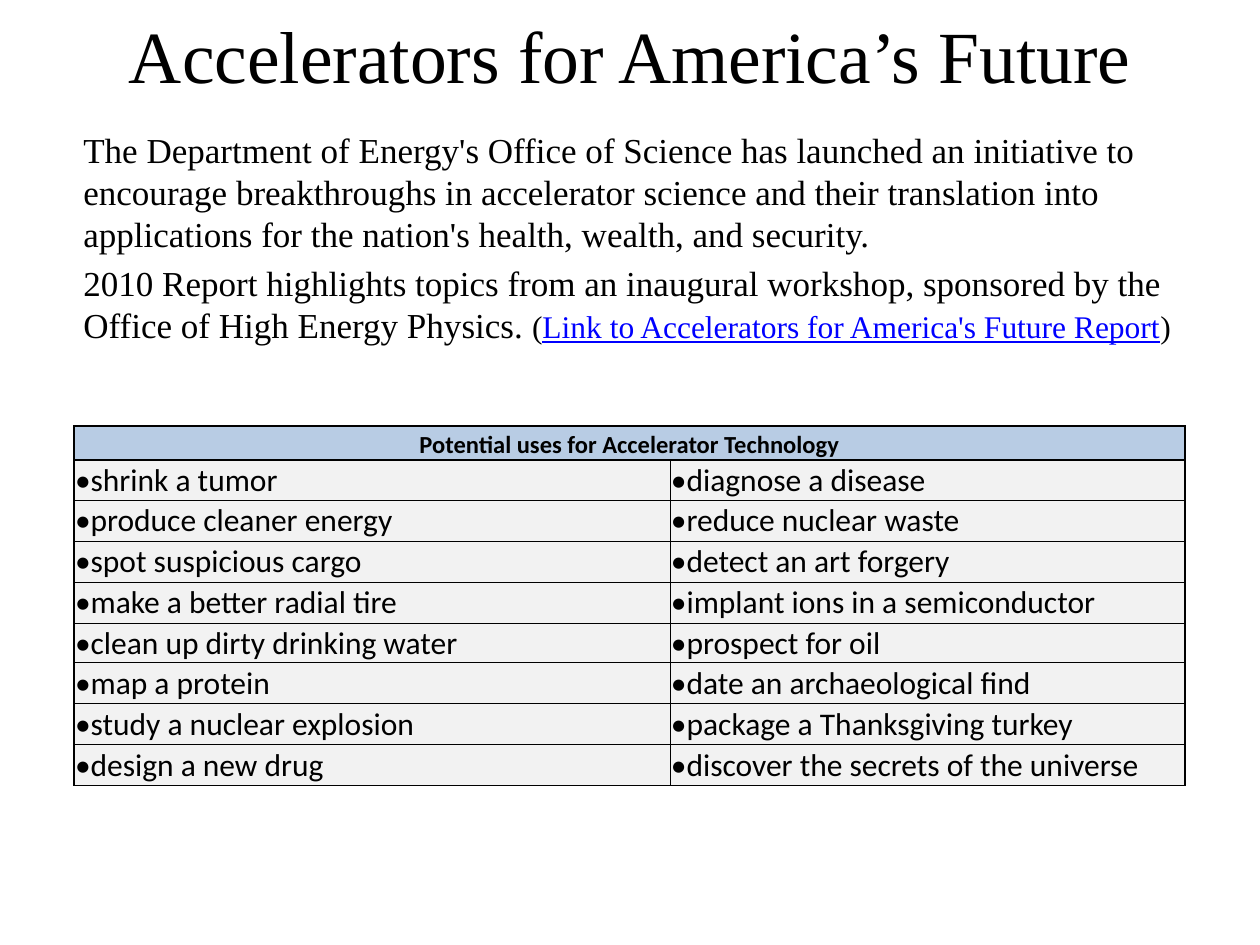
from dataclasses import dataclass

from lxml import etree
from pptx import Presentation
from pptx.dml.color import RGBColor
from pptx.enum.text import MSO_ANCHOR, MSO_AUTO_SIZE, PP_ALIGN
from pptx.oxml.ns import qn
from pptx.util import Emu, Pt

CENTER = PP_ALIGN.CENTER
LEFT = PP_ALIGN.LEFT
MIDDLE = MSO_ANCHOR.MIDDLE
BOTTOM = MSO_ANCHOR.BOTTOM
NO_AUTOFIT = MSO_AUTO_SIZE.NONE

PIXELS_PER_INCH = 126
SERIF, SANS = "Times New Roman", "Calibri"
BLACK, LINK_BLUE = "000000", "0000FF"
HEADER_FILL, BODY_FILL = "B8CCE4", "F2F2F2"
OUTER_LINE, INNER_LINE = 0.75, 0.5

TITLE = "Accelerators for America’s Future"
TABLE_HEADING = "Potential uses for Accelerator Technology"
USES = [
    ("shrink a tumor", "diagnose a disease"),
    ("produce cleaner energy", "reduce nuclear waste"),
    ("spot suspicious cargo", "detect an art forgery"),
    ("make a better radial tire", "implant ions in a semiconductor"),
    ("clean up dirty drinking water", "prospect for oil"),
    ("map a protein", "date an archaeological find"),
    ("study a nuclear explosion", "package a Thanksgiving turkey"),
    ("design a new drug", "discover the secrets of the universe"),
]
COLUMN_WIDTHS = (596, 515)
HEADER_HEIGHT, BODY_HEIGHT = 34, 326


@dataclass
class TextPart:
    text: str
    size: int = 20
    color: str = BLACK
    underline: bool = False


INTRODUCTION = [
    [TextPart("The Department of Energy's Office of Science has launched an "
              "initiative to encourage breakthroughs in accelerator science "
              "and their translation into applications for the nation's "
              "health, wealth, and security.")],
    [TextPart("2010 Report highlights topics from an inaugural workshop, "
              "sponsored by the Office of High Energy Physics. "),
     TextPart("(", 18),
     TextPart("Link to Accelerators for America's Future Report", 18,
              LINK_BLUE, True),
     TextPart(")", 18)],
]


def px(length: int) -> Emu:
    return Emu(round(length * 914400 / PIXELS_PER_INCH))


def rgb(color: str) -> RGBColor:
    return RGBColor.from_string(color)


def style_font(font, name: str, size: int, color: str = BLACK,
               bold: bool = False) -> None:
    font.name = name
    font.size = Pt(size)
    font.bold = bold
    font.color.rgb = rgb(color)


def add_title(slide) -> None:
    title = slide.shapes.title
    title.left, title.top, title.width, title.height = map(px, (63, 27, 1134, 55))
    frame = title.text_frame
    frame.text = TITLE
    frame.auto_size = NO_AUTOFIT
    frame.vertical_anchor = MIDDLE
    paragraph = frame.paragraphs[0]
    paragraph.alignment = CENTER
    style_font(paragraph.runs[0].font, SERIF, 42)


def add_introduction(slide) -> None:
    frame = slide.shapes.add_textbox(*map(px, (71, 122, 1134, 278))).text_frame
    frame.word_wrap = True
    for index, parts in enumerate(INTRODUCTION):
        paragraph = frame.add_paragraph() if index else frame.paragraphs[0]
        paragraph.space_before = Pt(4 if index else 0)
        for part in parts:
            run = paragraph.add_run()
            run.text = part.text
            style_font(run.font, SERIF, part.size, part.color)
            run.font.underline = part.underline


def add_bullet(paragraph) -> None:
    properties = paragraph._p.get_or_add_pPr()
    properties.set("marL", "0")
    properties.set("indent", "0")
    bullet_color = etree.SubElement(properties, qn("a:buClr"))
    etree.SubElement(bullet_color, qn("a:srgbClr"), val=BLACK)
    etree.SubElement(properties, qn("a:buFont"), typeface=SANS)
    etree.SubElement(properties, qn("a:buChar"), char="•")


def set_borders(cell, left: float, right: float, top: float,
                bottom: float) -> None:
    properties = cell._tc.get_or_add_tcPr()
    sides = {"a:lnL": left, "a:lnR": right, "a:lnT": top, "a:lnB": bottom}
    for tag, width in sides.items():
        line = etree.SubElement(properties, qn(tag), w=str(Pt(width)))
        fill = etree.SubElement(line, qn("a:solidFill"))
        etree.SubElement(fill, qn("a:srgbClr"), val=BLACK)


def fill_cell(cell, text: str, size: int, color: str, header: bool) -> None:
    cell.margin_left = cell.margin_right = cell.margin_top = px(1)
    cell.margin_bottom = 0
    cell.vertical_anchor = BOTTOM if header else MIDDLE
    cell.fill.solid()
    cell.fill.fore_color.rgb = rgb(color)
    cell.text_frame.text = text
    paragraph = cell.text_frame.paragraphs[0]
    if not header:
        add_bullet(paragraph)
    paragraph.alignment = CENTER if header else LEFT
    style_font(paragraph.runs[0].font, SANS, size, bold=header)


def add_uses_table(slide) -> None:
    count = len(USES)
    table = slide.shapes.add_table(
        count + 1, 2, px(74), px(426), px(sum(COLUMN_WIDTHS)),
        px(HEADER_HEIGHT + BODY_HEIGHT)).table
    for column, width in zip(table.columns, COLUMN_WIDTHS):
        column.width = px(width)

    # Header across both columns
    table.rows[0].height = px(HEADER_HEIGHT)
    table.cell(0, 0).merge(table.cell(0, 1))
    for column in range(2):
        set_borders(table.cell(0, column), *[OUTER_LINE] * 4)
    fill_cell(table.cell(0, 0), TABLE_HEADING, 14, HEADER_FILL, True)

    # Bulleted uses, with row edges spread evenly over the body
    edges = [BODY_HEIGHT * index // count for index in range(count + 1)]
    for row, uses in enumerate(USES, start=1):
        table.rows[row].height = px(edges[row] - edges[row - 1])
        for column, use in enumerate(uses):
            cell = table.cell(row, column)
            set_borders(
                cell,
                left=INNER_LINE if column else OUTER_LINE,
                right=OUTER_LINE if column else INNER_LINE,
                top=OUTER_LINE if row == 1 else INNER_LINE,
                bottom=OUTER_LINE if row == count else INNER_LINE)
            fill_cell(cell, use, 18, BODY_FILL, False)


def main() -> None:
    presentation = Presentation()
    presentation.slide_width = px(1260)
    presentation.slide_height = px(945)
    slide = presentation.slides.add_slide(presentation.slide_layouts[5])
    add_title(slide)
    add_introduction(slide)
    add_uses_table(slide)
    presentation.save("out.pptx")


if __name__ == "__main__":
    main()
